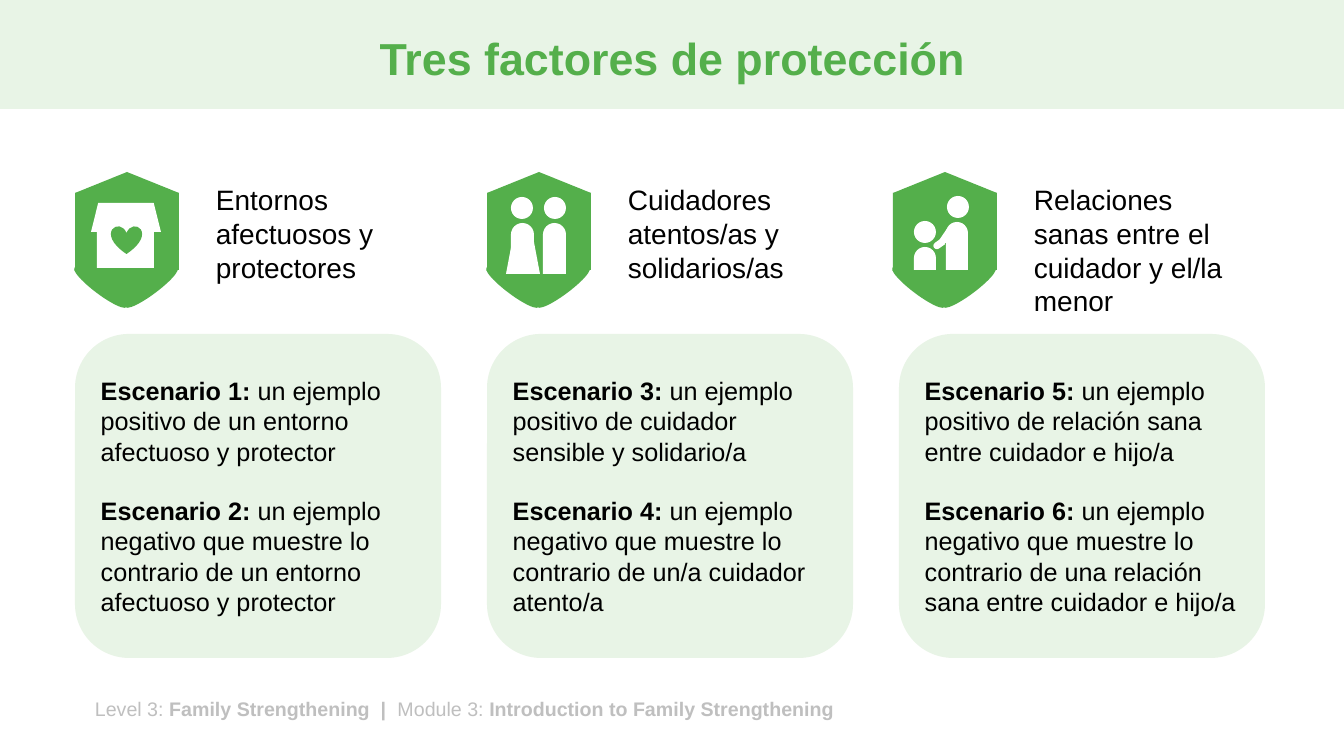
from pptx import Presentation
from pptx.dml.color import RGBColor
from pptx.enum.shapes import MSO_SHAPE
from pptx.enum.text import MSO_ANCHOR, PP_ALIGN
from pptx.util import Emu, Pt

RECT = MSO_SHAPE.RECTANGLE
TRIANGLE = MSO_SHAPE.ISOSCELES_TRIANGLE
STORAGE = MSO_SHAPE.FLOWCHART_STORED_DATA
TRAPEZOID = MSO_SHAPE.TRAPEZOID
HEART = MSO_SHAPE.HEART
OVAL = MSO_SHAPE.OVAL
ROUND_TOP = MSO_SHAPE.ROUND_2_SAME_RECTANGLE
SKIRT = MSO_SHAPE.FLOWCHART_MANUAL_OPERATION
ROUNDED = MSO_SHAPE.ROUNDED_RECTANGLE
LEFT, CENTER = PP_ALIGN.LEFT, PP_ALIGN.CENTER
TOP, MIDDLE = MSO_ANCHOR.TOP, MSO_ANCHOR.MIDDLE

EMU_PER_PX = 914400 / 100.8
FONT = "Arial"
GREEN, PALE, WHITE, BLACK, GREY = "54AF4B", "E8F4E6", "FFFFFF", "000000", "BFBFBF"

CARD_LEFT, CARD_PITCH = 75, 412
SHIELD_TOP = 172

SHIELD = [
    (RECT, (0, 21, 104, 77), GREEN, 0),
    (STORAGE, (50, 73, 38, 65), GREEN, 233.2),
    (STORAGE, (14, 73, 38, 65), GREEN, 307),
    (RECT, (16, 59, 71, 46), GREEN, 0),
    (TRIANGLE, (0, 0, 104, 21), GREEN, 0),
]
HOUSE = [
    (TRAPEZOID, (16, 31, 70, 29), WHITE, 0),
    (RECT, (22, 59, 57, 37), WHITE, 0),
    (HEART, (36, 54, 31, 28), GREEN, 0),
]
COUPLE = [
    (ROUND_TOP, (56, 51, 23, 51), WHITE, 0),
    (OVAL, (57, 25, 22, 22), WHITE, 0),
    (ROUND_TOP, (24, 51, 23, 51), WHITE, 0),
    (OVAL, (24, 25, 22, 22), WHITE, 0),
    (SKIRT, (19, 66, 34, 36), WHITE, 180),
]
PARENT_AND_CHILD = [
    (ROUND_TOP, (21, 75, 22, 23), WHITE, 0),
    (OVAL, (21, 49, 22, 22), WHITE, 0),
    (ROUND_TOP, (53, 50, 22, 48), WHITE, 0),
    (OVAL, (54, 24, 22, 22), WHITE, 0),
    (ROUND_TOP, (49, 57, 7, 16), WHITE, 214.3),
    (ROUND_TOP, (42, 67, 7, 11), WHITE, 235),
]

FACTORS = [
    (75, HOUSE, "Entornos afectuosos y protectores", [
        ("Escenario 1: ", "un ejemplo positivo de un entorno afectuoso y protector"),
        ("Escenario 2: ", "un ejemplo negativo que muestre lo contrario de un entorno "
                          "afectuoso y protector")]),
    (487, COUPLE, "Cuidadores atentos/as y solidarios/as", [
        ("Escenario 3: ", "un ejemplo positivo de cuidador sensible y solidario/a"),
        ("Escenario 4: ", "un ejemplo negativo que muestre lo contrario de un/a cuidador "
                          "atento/a")]),
    (893, PARENT_AND_CHILD, "Relaciones sanas entre el cuidador y el/la menor", [
        ("Escenario 5: ", "un ejemplo positivo de relación sana entre cuidador e hijo/a"),
        ("Escenario 6: ", "un ejemplo negativo que muestre lo contrario de una relación "
                          "sana entre cuidador e hijo/a")]),
]


def px(length):
    return Emu(round(length * EMU_PER_PX))


def color(value):
    return RGBColor.from_string(value)


def write(frame, paragraphs, size, fill=BLACK, align=LEFT, anchor=TOP, gap=0, spacing=None):
    frame.word_wrap = True
    frame.vertical_anchor = anchor
    for index, runs in enumerate(paragraphs):
        paragraph = frame.add_paragraph() if index else frame.paragraphs[0]
        paragraph.alignment = align
        paragraph.space_before = Pt(gap if index else 0)
        if spacing:
            paragraph.line_spacing = spacing
        for text, bold in runs:
            run = paragraph.add_run()
            run.text = text
            run.font.name = FONT
            run.font.size = Pt(size)
            run.font.bold = bold
            run.font.color.rgb = color(fill)


def add_block(shapes, preset, box, fill, rotation=0):
    block = shapes.add_shape(preset, *map(px, box))
    block.shadow.inherit = False
    block.fill.solid()
    block.fill.fore_color.rgb = color(fill)
    block.line.fill.background()
    block.rotation = rotation
    if preset == ROUND_TOP:
        block.adjustments[0] = 0.5
    return block


def add_label(slide, box, paragraphs, size, **style):
    label = slide.shapes.add_textbox(*map(px, box))
    write(label.text_frame, paragraphs, size, **style)


def add_badge(slide, left, symbol):
    badge = slide.shapes.add_group_shape()
    for preset, (x, y, width, height), fill, rotation in SHIELD + symbol:
        add_block(badge.shapes, preset, (left + x, SHIELD_TOP + y, width, height), fill, rotation)


def add_card(slide, left, scenarios):
    card = add_block(slide.shapes, ROUNDED, (left, 334, 366, 324), PALE)
    paragraphs = [[(name, True), (summary, False)] for name, summary in scenarios]
    write(card.text_frame, paragraphs, 18, anchor=MIDDLE, gap=21)


def add_header(slide):
    band = add_block(slide.shapes, RECT, (0, 0, 1344, 109), PALE)
    title = slide.shapes.title
    band.element.addnext(title.element)
    title.left, title.top, title.width, title.height = map(px, (93, 13, 1159, 96))
    write(title.text_frame, [[("Tres factores de protección", True)]], 32, fill=GREEN,
          align=CENTER, anchor=MIDDLE, spacing=0.9)


def main():
    deck = Presentation()
    deck.slide_width, deck.slide_height = px(1344), px(756)
    slide = deck.slides.add_slide(deck.slide_layouts[5])
    add_header(slide)
    for column, (badge_left, symbol, factor, scenarios) in enumerate(FACTORS):
        add_badge(slide, badge_left, symbol)
        add_label(slide, (badge_left + 131, 178, 210, 146), [[(factor, False)]], 20)
        add_card(slide, CARD_LEFT + column * CARD_PITCH, scenarios)
    add_label(slide, (85, 692, 1070, 34), [[
        ("Level 3: ", False), ("Family Strengthening  |  ", True),
        ("Module 3: ", False), ("Introduction to Family Strengthening", True)]], 14, fill=GREY)
    deck.save("out.pptx")


if __name__ == "__main__":
    main()
